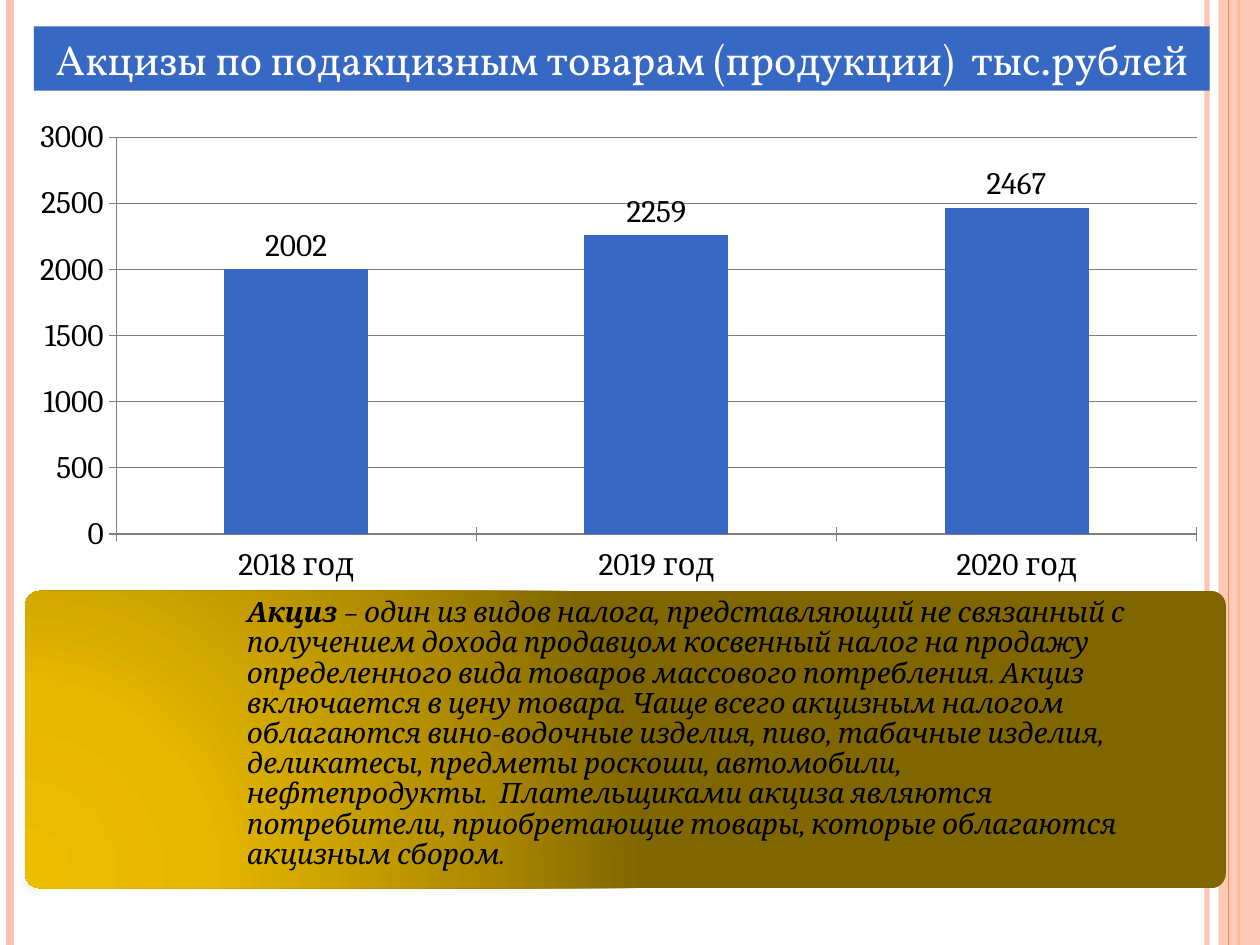
"""Build a slide on excise revenue: a title bar, a column chart and a definition panel."""
import pptx
import pptx.chart.data
import pptx.dml.color
import pptx.enum.chart
import pptx.enum.shapes
import pptx.enum.text
import pptx.oxml
import pptx.oxml.ns
import pptx.util
from pptx.util import Inches

COLORS = {"blue": "3668C4", "peach": "FEC3AE", "orange": "FE8637", "white": "FFFFFF",
          "black": "000000", "grid": "7F7F7F"}
GRADIENT = {0: "EDBE00", 30: "E5B700", 75: "AC8900", 100: "7F6600"}
DRAWING = pptx.oxml.ns.nsdecls("a")
SHAPES = pptx.enum.shapes.MSO_SHAPE
TITLE = "Акцизы по подакцизным товарам (продукции)  тыс.рублей"
REVENUE = {"2018 год": 2002, "2019 год": 2259, "2020 год": 2467}
TERM = "Акциз"
DEFINITION = (
    " – один из видов налога, представляющий не связанный с получением дохода продавцом "
    "косвенный налог на продажу определенного вида товаров массового потребления. Акциз "
    "включается в цену товара. Чаще всего акцизным налогом облагаются вино-водочные изделия, "
    "пиво, табачные изделия, деликатесы, предметы роскоши, автомобили, нефтепродукты.  "
    "Плательщиками акциза являются потребители, приобретающие товары, которые облагаются "
    "акцизным сбором.")


def rgb(name):
    """Return the named colour."""
    return pptx.dml.color.RGBColor.from_string(COLORS[name])


def set_format(target, **values):
    """Set each given attribute on the target."""
    for name, value in values.items():
        setattr(target, name, value)


def set_font(font, color, **values):
    """Apply a colour and format values to a font."""
    set_format(font, **values)
    font.color.rgb = rgb(color)


def set_alpha(element, percent):
    """Make the solid colour inside an element partly transparent."""
    color = element.find(".//" + pptx.oxml.ns.qn("a:srgbClr"))
    color.append(pptx.oxml.parse_xml(f'<a:alpha {DRAWING} val="{percent * 1000}"/>'))


def add_block(slide, box, color=None, preset=SHAPES.RECTANGLE):
    """Add a borderless shape, filled when a colour is given."""
    shape = slide.shapes.add_shape(preset, *map(Inches, box))
    shape.shadow.inherit = False
    shape.line.fill.background()
    if color:
        shape.fill.solid()
        shape.fill.fore_color.rgb = rgb(color)
    return shape


def add_rule(slide, x, height, color, width, alpha=100):
    """Add a vertical rule from the top of the slide."""
    rule = slide.shapes.add_connector(
        pptx.enum.shapes.MSO_CONNECTOR.STRAIGHT, Inches(x), 0, Inches(x), Inches(height))
    rule.line.color.rgb = rgb(color)
    rule.line.width = pptx.util.Pt(width)
    properties = rule._element.spPr
    properties.append(pptx.oxml.parse_xml(f"<a:effectLst {DRAWING}/>"))
    if alpha < 100:
        set_alpha(properties, alpha)


def add_frame(slide, width, height):
    """Draw the striped side edges of the slide."""
    add_rule(slide, width - 0.42, height, "peach", 3, 93)
    add_rule(slide, 0.08, height, "peach", 4.5)
    add_rule(slide, width - 0.17, height, "orange", 1.5)
    band = add_block(slide, (width - 0.33, 0, 0.33, height), "peach")
    set_alpha(band._element.spPr, 87)
    add_rule(slide, width - 0.25, height, "orange", 0.75)


def add_title(slide, box):
    """Add the title bar."""
    frame = add_block(slide, box, "blue").text_frame
    set_format(frame, word_wrap=True, vertical_anchor=pptx.enum.text.MSO_ANCHOR.MIDDLE)
    paragraph = frame.paragraphs[0]
    paragraph.alignment = pptx.enum.text.PP_ALIGN.CENTER
    run = paragraph.add_run()
    run.text = TITLE
    set_font(run.font, "white", size=pptx.util.Pt(24), name="Vollkorn")


def set_plot_area(chart, **fractions):
    """Fix the inner plot area as fractions of the chart."""
    plot_area = chart._chartSpace.chart.plotArea
    layout = plot_area.find(pptx.oxml.ns.qn("c:layout"))
    if layout is not None:
        plot_area.remove(layout)
    sizes = "".join(f'<c:{name} val="{value}"/>' for name, value in fractions.items())
    plot_area.insert(0, pptx.oxml.parse_xml(
        f'<c:layout {pptx.oxml.ns.nsdecls("c")}><c:manualLayout><c:layoutTarget val="inner"/>'
        f'<c:xMode val="edge"/><c:yMode val="edge"/>{sizes}</c:manualLayout></c:layout>'))


def add_revenue_chart(slide, box):
    """Add the column chart of yearly revenue."""
    data = pptx.chart.data.CategoryChartData()
    data.categories = list(REVENUE)
    data.add_series("Series 1", list(REVENUE.values()))
    chart = slide.shapes.add_chart(
        pptx.enum.chart.XL_CHART_TYPE.COLUMN_CLUSTERED, *map(Inches, box), data).chart
    set_format(chart, has_legend=False, has_title=False)
    set_font(chart.font, "black", size=pptx.util.Pt(17.9), name="Cambria")
    set_plot_area(chart, x=0.08, y=0.06, w=0.9, h=0.82)
    plot = chart.plots[0]
    set_format(plot, gap_width=150, vary_by_categories=False, has_data_labels=True)
    set_format(plot.data_labels, show_value=True,
               position=pptx.enum.chart.XL_LABEL_POSITION.OUTSIDE_END)
    fill = plot.series[0].format.fill
    fill.solid()
    fill.fore_color.rgb = rgb("blue")
    set_format(chart.value_axis, minimum_scale=0, maximum_scale=3000, major_unit=500,
               has_major_gridlines=True)
    for axis in (chart.category_axis, chart.value_axis):
        axis.major_tick_mark = pptx.enum.chart.XL_TICK_MARK.CROSS
        axis.format.line.color.rgb = rgb("grid")
    chart.value_axis.major_gridlines.format.line.color.rgb = rgb("grid")


def add_definition(slide, box):
    """Add the gradient panel with the definition of the tax."""
    left, top, width, height = box
    panel = add_block(slide, box, preset=SHAPES.ROUNDED_RECTANGLE)
    panel.adjustments[0] = 0.05
    stops = "".join(f'<a:gs pos="{place * 1000}"><a:srgbClr val="{color}"/></a:gs>'
                    for place, color in GRADIENT.items())
    properties = panel._element.spPr
    properties.insert(2, pptx.oxml.parse_xml(
        f'<a:gradFill {DRAWING} rotWithShape="1"><a:gsLst>{stops}</a:gsLst><a:path path="circle">'
        '<a:fillToRect l="5000" t="100000" r="120000" b="10000"/></a:path></a:gradFill>'))
    properties.find(pptx.oxml.ns.qn("a:effectLst")).append(pptx.oxml.parse_xml(
        f'<a:outerShdw {DRAWING} blurRad="50800" dist="20320" dir="5400000" rotWithShape="0">'
        f'<a:srgbClr val="{COLORS["black"]}"><a:alpha val="42000"/></a:srgbClr></a:outerShdw>'))

    text_box = slide.shapes.add_textbox(
        *map(Inches, (left + 1.76, top, width - 2.43, height)))
    frame = text_box.text_frame
    set_format(frame, word_wrap=True, margin_left=0, margin_right=0, margin_bottom=0,
               margin_top=Inches(0.06))
    paragraph = frame.paragraphs[0]
    paragraph.line_spacing = 0.9
    for text, bold in ((TERM, True), (DEFINITION, False)):
        run = paragraph.add_run()
        run.text = text
        set_font(run.font, "black", size=pptx.util.Pt(16), name="Cambria", bold=bold, italic=True)


def main():
    """Build and save the presentation."""
    width, height = 10, 7.5
    presentation = pptx.Presentation()
    set_format(presentation, slide_width=Inches(width), slide_height=Inches(height))
    slide = presentation.slides.add_slide(presentation.slide_layouts[6])
    add_frame(slide, width, height)
    add_title(slide, (0.27, 0.21, 9.33, 0.51))
    add_revenue_chart(slide, (0.16, 0.86, 9.53, 3.84))
    add_definition(slide, (0.2, 4.69, 9.53, 2.36))
    presentation.save("out.pptx")


if __name__ == "__main__":
    main()
